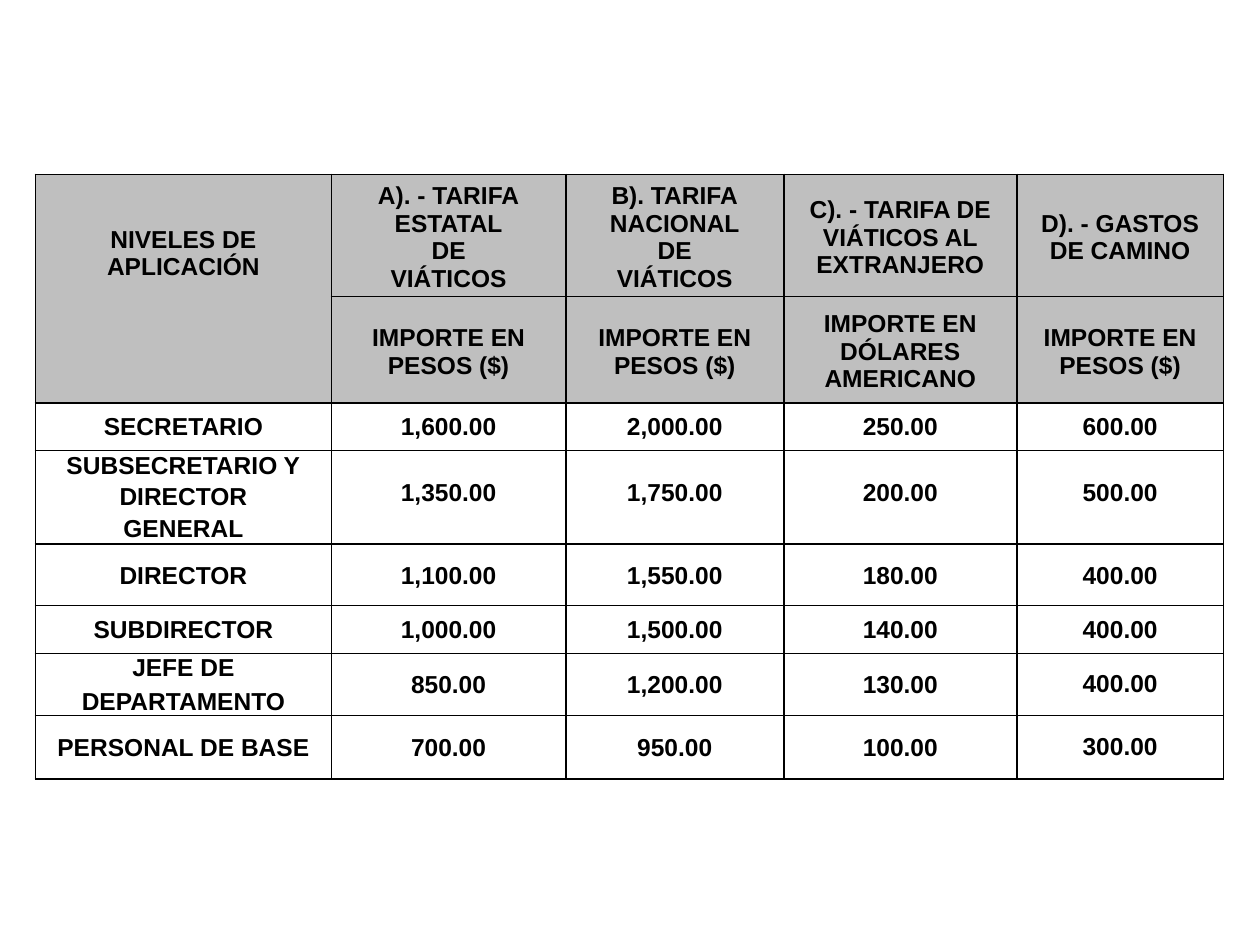
from dataclasses import dataclass
from lxml.etree import SubElement
from pptx import Presentation
from pptx.dml.color import RGBColor
from pptx.enum.text import MSO_ANCHOR, PP_ALIGN
from pptx.oxml.ns import qn
from pptx.util import Pt


@dataclass(frozen=True)
class Theme:
    ink: str = "000000"
    header: str = "BFBFBF"
    font: str = "Arial"
    size: float = 14
    border: float = 1


THEME = Theme()
COL_WIDTHS = [169.2, 133.9, 124.6, 133.2, 118.1]
ROW_HEIGHTS = [69.6, 60.3, 27.4, 53.2, 35.3, 27.4, 35.3, 36.3]

# \v is a line break inside a paragraph, \n starts a new paragraph
PESOS = "IMPORTE EN\nPESOS ($)"
HEADERS = [
    ["NIVELES DE\vAPLICACIÓN", "A). - TARIFA\vESTATAL\vDE\vVIÁTICOS",
     "B). TARIFA\vNACIONAL\vDE\vVIÁTICOS",
     "C). - TARIFA DE\vVIÁTICOS AL\vEXTRANJERO", "D). - GASTOS\vDE CAMINO"],
    [None, PESOS, PESOS, "IMPORTE EN\vDÓLARES\vAMERICANO", PESOS],
]
# level, amounts, then top insets of the level, the amounts and the last amount
LEVELS = [
    ("SECRETARIO", ["1,600.00", "2,000.00", "250.00", "600.00"], (6.1, 6.1, 6.1)),
    ("SUBSECRETARIO Y\nDIRECTOR\vGENERAL",
     ["1,350.00", "1,750.00", "200.00", "500.00"], (0.6, 16.4, 16.4)),
    ("DIRECTOR", ["1,100.00", "1,550.00", "180.00", "400.00"], (10.4, 10.4, 10.4)),
    ("SUBDIRECTOR", ["1,000.00", "1,500.00", "140.00", "400.00"], (6.1, 6.1, 6.1)),
    ("JEFE DE\nDEPARTAMENTO",
     ["850.00", "1,200.00", "130.00", "400.00"], (0.6, 10.2, 9.5)),
    ("PERSONAL DE BASE",
     ["700.00", "950.00", "100.00", "300.00"], (10.9, 10.9, 10.2)),
]


def set_borders(cell):
    tcPr = cell._tc.get_or_add_tcPr()
    for side in ("lnL", "lnR", "lnT", "lnB"):
        ln = SubElement(tcPr, qn(f"a:{side}"), w=str(Pt(THEME.border)))
        fill = SubElement(ln, qn("a:solidFill"))
        SubElement(fill, qn("a:srgbClr"), val=THEME.ink)


def format_cell(cell, text, top, anchor=MSO_ANCHOR.TOP, fill=None):
    set_borders(cell)
    if fill:
        cell.fill.solid()
        cell.fill.fore_color.rgb = RGBColor.from_string(fill)
    else:
        cell.fill.background()
    layout = {"margin_left": 0, "margin_right": 0, "margin_bottom": 0,
              "margin_top": Pt(top), "vertical_anchor": anchor}
    for name, value in layout.items():
        setattr(cell, name, value)
    if text is None:
        return
    cell.text_frame.text = text
    font = {"name": THEME.font, "size": Pt(THEME.size), "bold": True}
    for p in cell.text_frame.paragraphs:
        p.alignment = PP_ALIGN.CENTER
        for r in p.runs:
            for name, value in font.items():
                setattr(r.font, name, value)
            r.font.color.rgb = RGBColor.from_string(THEME.ink)


def fill_headers(table):
    for row, texts in enumerate(HEADERS):
        for col, text in enumerate(texts):
            top, anchor = (2.7, MSO_ANCHOR.MIDDLE) if col else (29.4, MSO_ANCHOR.TOP)
            format_cell(table.cell(row, col), text, top, anchor, THEME.header)
    table.cell(0, 0).merge(table.cell(1, 0))


def fill_levels(table):
    for row, (level, amounts, tops) in enumerate(LEVELS, len(HEADERS)):
        level_top, amount_top, last_top = tops
        insets = [level_top] + [amount_top] * (len(amounts) - 1) + [last_top]
        for col, (text, top) in enumerate(zip([level, *amounts], insets)):
            format_cell(table.cell(row, col), text, top)
    table.cell(3, 0).text_frame.paragraphs[1].line_spacing = 1.15
    department = table.cell(6, 0).text_frame.paragraphs[1]
    department.space_before = Pt(2.5)
    department.line_spacing = Pt(16.6)


def add_rates_table(s, left, top):
    """Place the travel allowance table with its corner at left, top."""
    frame = s.shapes.add_table(len(ROW_HEIGHTS), len(COL_WIDTHS), Pt(left), Pt(top),
                               Pt(sum(COL_WIDTHS)), Pt(sum(ROW_HEIGHTS)))
    table = frame.table
    table.first_row = table.horz_banding = False
    for column, width in zip(table.columns, COL_WIDTHS):
        column.width = Pt(width)
    for row, height in zip(table.rows, ROW_HEIGHTS):
        row.height = Pt(height)
    fill_headers(table)
    fill_levels(table)


def main():
    prs = Presentation()
    prs.slide_width, prs.slide_height = Pt(720), Pt(540)
    s = prs.slides.add_slide(prs.slide_layouts[6])
    add_rates_table(s, 20.2, 99.7)
    prs.save("out.pptx")


if __name__ == "__main__":
    main()
